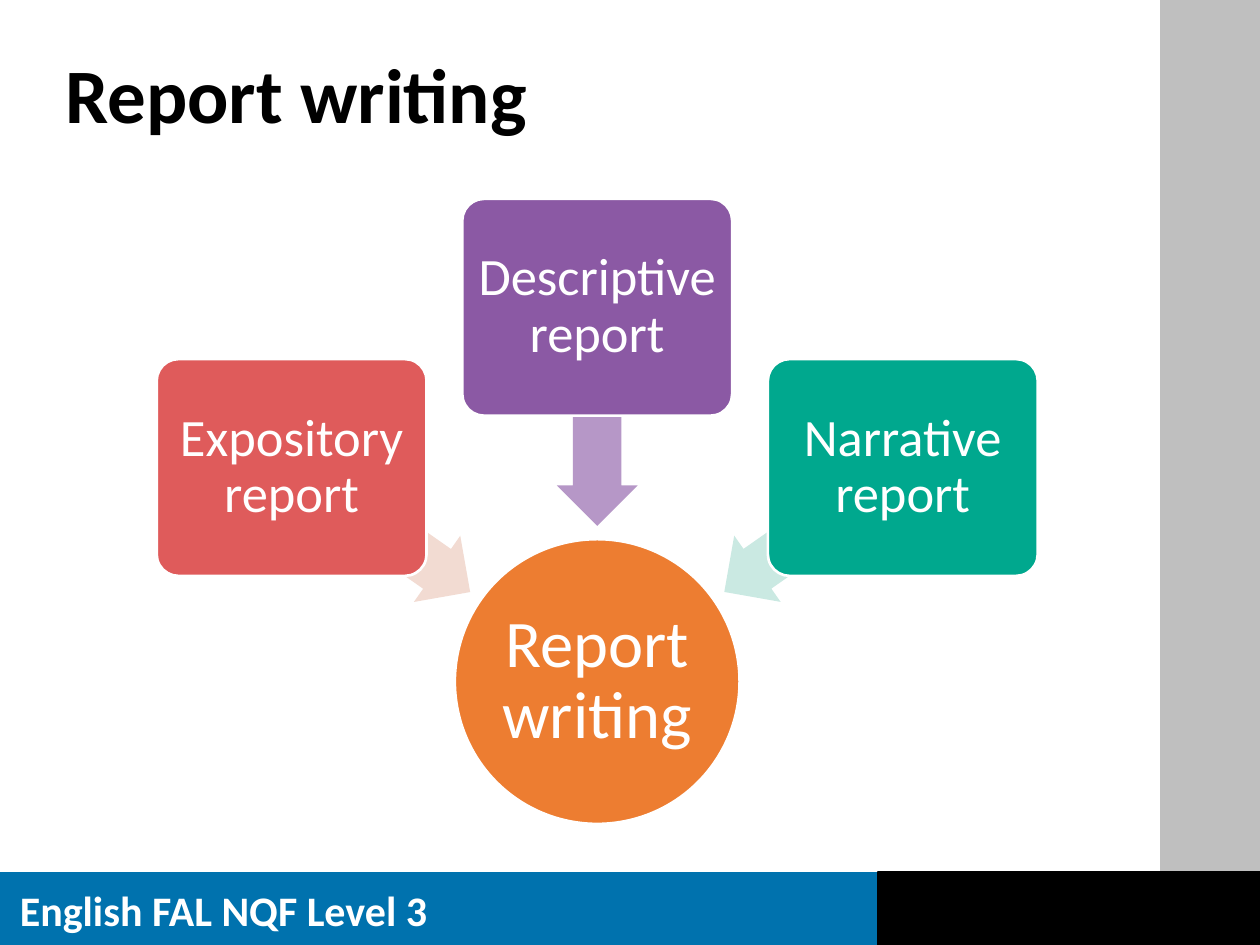
"""Build the report writing slide: three report types converging on one hub."""
from dataclasses import dataclass

import pptx
import pptx.dml.color
import pptx.enum.shapes
import pptx.enum.text
import pptx.util

Cm = pptx.util.Cm
Pt = pptx.util.Pt
Shape = pptx.enum.shapes.MSO_SHAPE
Align = pptx.enum.text.PP_ALIGN
Anchor = pptx.enum.text.MSO_ANCHOR

FONT = "Calibri"
WHITE = "FFFFFF"
BLACK = "000000"
CENTRE = 12.04
CARD_WIDTH, CARD_HEIGHT = 5.44, 4.37
ARROW_WIDTH, ARROW_HEIGHT = 4.39, 1.63
HUB_SIZE, HUB_TOP = 5.74, 10.87


@dataclass(frozen=True)
class Box:
    left: float
    top: float
    width: float
    height: float

    def lengths(self) -> tuple:
        return tuple(map(Cm, (self.left, self.top, self.width, self.height)))


@dataclass(frozen=True)
class Report:
    label: str
    card_colour: str
    arrow_colour: str
    side: int
    card_top: float
    arrow_top: float
    rotation: int


REPORTS = (
    Report("Expository report", "DF5B5B", "F2DBD2", -1, 7.24, 9.86, 215),
    Report("Descriptive report", "8B59A4", "B697C7", 0, 4.01, 7.59, 270),
    Report("Narrative report", "00A88E", "CAE9E2", 1, 7.24, 9.86, 325),
)


def rgb(colour: str) -> pptx.dml.color.RGBColor:
    return pptx.dml.color.RGBColor.from_string(colour)


def draw_shape(slide, kind, box: Box, fill: str, line: str = "", line_width: float = 1.5):
    shape = slide.shapes.add_shape(kind, *box.lengths())
    shape.shadow.inherit = False
    shape.fill.solid()
    shape.fill.fore_color.rgb = rgb(fill)
    if line:
        shape.line.color.rgb = rgb(line)
        shape.line.width = Pt(line_width)
    else:
        shape.line.fill.background()
    return shape


def write(frame, text: str, size: int, colour: str, bold: bool = False) -> None:
    frame.word_wrap = True
    paragraph = frame.paragraphs[0]
    paragraph.text = text
    font = paragraph.font
    font.name, font.size, font.bold = FONT, Pt(size), bold
    font.color.rgb = rgb(colour)


def write_centred(shape, text: str, size: int, inset: float) -> None:
    frame = shape.text_frame
    write(frame, text, size, WHITE)
    frame.margin_left = frame.margin_right = Cm(inset)
    frame.margin_top = frame.margin_bottom = Cm(inset)
    frame.vertical_anchor = Anchor.MIDDLE
    frame.paragraphs[0].alignment = Align.CENTER
    frame.paragraphs[0].line_spacing = 0.9


def draw_frame(slide) -> None:
    draw_shape(slide, Shape.RECTANGLE, Box(23.39, 0, 2.01, 19.02), "BFBFBF")
    draw_shape(slide, Shape.RECTANGLE, Box(0, 17.58, 25.4, 1.5), "0072AE")
    draw_shape(slide, Shape.RECTANGLE, Box(17.7, 17.58, 7.7, 1.47), BLACK, BLACK, 1)
    course = slide.shapes.add_textbox(*Box(0.15, 17.7, 9.53, 1.27).lengths())
    write(course.text_frame, "English FAL NQF Level 3", 24, WHITE, True)
    title = slide.shapes.add_textbox(*Box(1.07, 1.02, 21.97, 2.01).lengths())
    write(title.text_frame, "Report writing", 44, BLACK, True)
    title.text_frame.paragraphs[0].line_spacing = 0.9


def draw_report(slide, report: Report) -> None:
    arrow_left = CENTRE + report.side * 4.36 - ARROW_WIDTH / 2
    arrow = draw_shape(slide, Shape.LEFT_ARROW,
                       Box(arrow_left, report.arrow_top, ARROW_WIDTH, ARROW_HEIGHT),
                       report.arrow_colour)
    arrow.adjustments[0] = 0.6
    arrow.adjustments[1] = 0.5
    arrow.rotation = report.rotation

    card_left = CENTRE + report.side * 6.16 - CARD_WIDTH / 2
    card = draw_shape(slide, Shape.ROUNDED_RECTANGLE,
                      Box(card_left, report.card_top, CARD_WIDTH, CARD_HEIGHT),
                      report.card_colour, WHITE)
    card.adjustments[0] = 0.1
    write_centred(card, report.label, 30, 0.15)


def main() -> None:
    deck = pptx.Presentation()
    deck.slide_width, deck.slide_height = Cm(25.4), Cm(19.05)
    slide = deck.slides.add_slide(deck.slide_layouts[6])
    draw_frame(slide)
    hub = draw_shape(slide, Shape.OVAL,
                     Box(CENTRE - HUB_SIZE / 2, HUB_TOP, HUB_SIZE, HUB_SIZE),
                     "ED7D31", WHITE)
    write_centred(hub, "Report writing", 38, 0.08)
    for report in REPORTS:
        draw_report(slide, report)
    deck.save("out.pptx")


if __name__ == "__main__":
    main()
